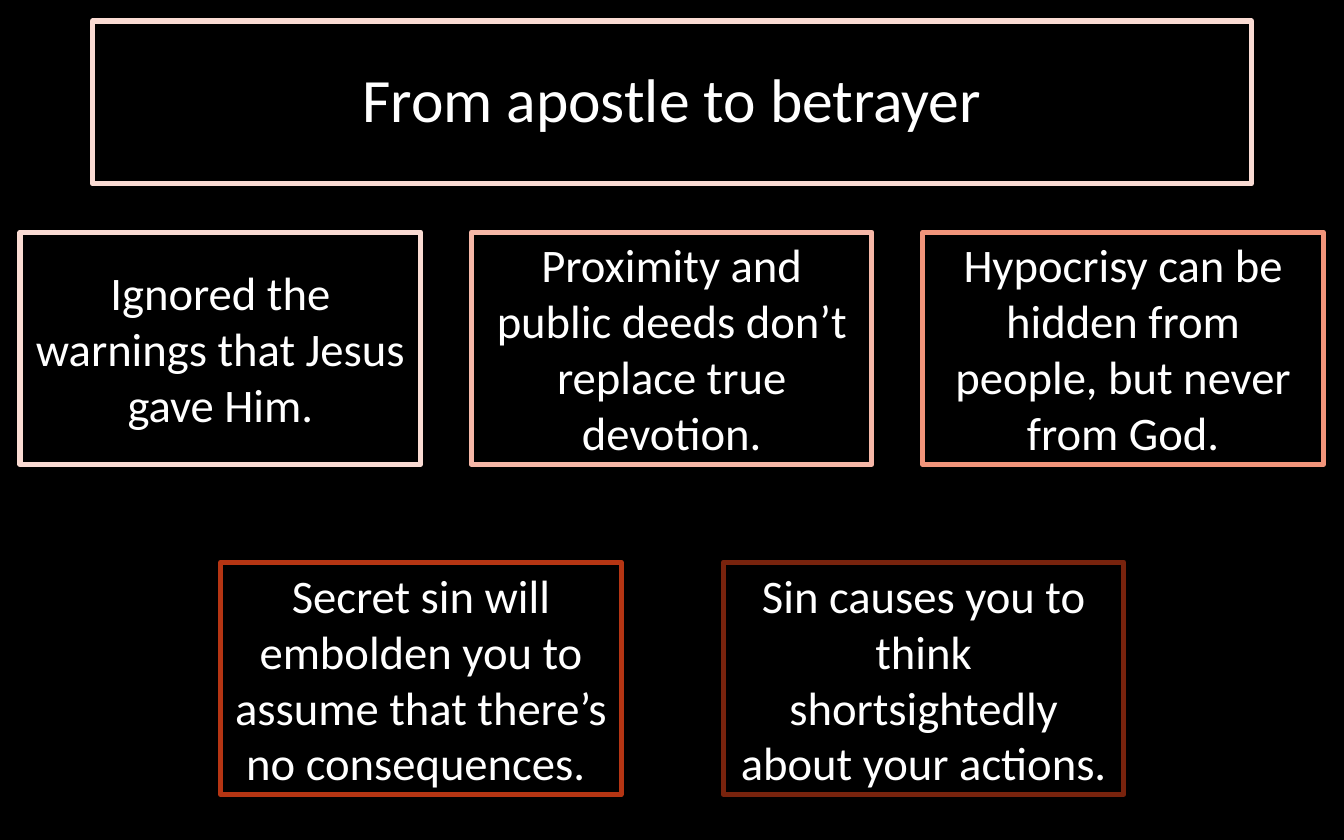
import pptx
import pptx.dml.color
import pptx.enum.shapes
import pptx.enum.text
import pptx.util
from lxml import etree
from pptx.oxml.ns import qn
from pptx.util import Cm

FONT = "Calibri"
CARD_WIDTH, CARD_HEIGHT = 7.57, 4.39
ROWS = [
    (0.38, 4.39, 8.53, [
        ("Ignored the warnings that Jesus gave Him.", "FADBD3"),
        ("Proximity and public deeds don’t replace true devotion.", "F6B7A7"),
        ("Hypocrisy can be hidden from people, but never from God.", "F1947A"),
    ]),
    (4.17, 10.63, 9.5, [
        ("Secret sin will embolden you to assume that there’s no consequences. ", "B53513"),
        ("Sin causes you to think shortsightedly about your actions.", "78230D"),
    ]),
]


def color(value):
    """Turn a hex string into a colour."""
    return pptx.dml.color.RGBColor.from_string(value)


def outline(box, value, width):
    """Give a box a plain outline with round corners and no fill."""
    box.fill.background()
    box.line.color.rgb = color(value)
    box.line.width = pptx.util.Pt(width)
    etree.SubElement(box.line._get_or_add_ln(), qn("a:round"))


def write(box, text, size):
    """Write centred white text in a box."""
    frame = box.text_frame
    frame.text = text
    frame.word_wrap = True
    frame.auto_size = pptx.enum.text.MSO_AUTO_SIZE.NONE
    frame.vertical_anchor = pptx.enum.text.MSO_ANCHOR.MIDDLE
    para = frame.paragraphs[0]
    para.alignment = pptx.enum.text.PP_ALIGN.CENTER
    para.font.name = FONT
    para.font.size = pptx.util.Pt(size)
    para.font.color.rgb = color("FFFFFF")
    return para


def add_title(page, text):
    """Place and format the title."""
    box = page.shapes.title
    box.left, box.top, box.width, box.height = Cm(1.75), Cm(0.4), Cm(21.9), Cm(3.07)
    outline(box, "FADBD3", 3)
    write(box, text, 33).line_spacing = 0.9


def add_card(page, left, top, text, value):
    """Add one outlined card."""
    box = page.shapes.add_shape(
        pptx.enum.shapes.MSO_SHAPE.RECTANGLE,
        Cm(left), Cm(top), Cm(CARD_WIDTH), Cm(CARD_HEIGHT))
    box.shadow.inherit = False
    outline(box, value, 2.75)
    write(box, text, 25)


def main():
    """Build the slide."""
    deck = pptx.Presentation()
    deck.slide_width, deck.slide_height = Cm(25.4), Cm(15.88)
    page = deck.slides.add_slide(deck.slide_layouts.get_by_name("Title Only"))
    page.background.fill.solid()
    page.background.fill.fore_color.rgb = color("000000")
    add_title(page, "From apostle to betrayer")
    for left, top, pitch, cards in ROWS:
        for index, (text, value) in enumerate(cards):
            add_card(page, left + index * pitch, top, text, value)
    deck.save("out.pptx")


if __name__ == "__main__":
    main()
